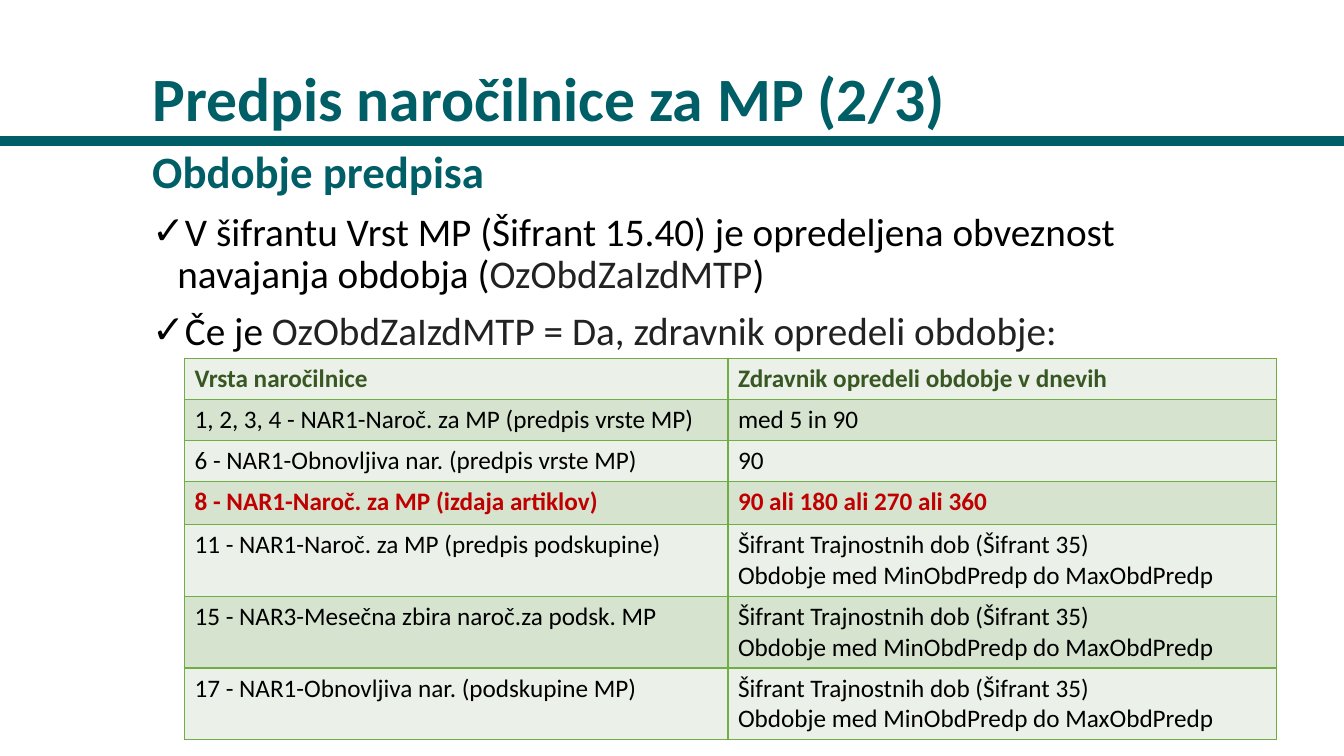
import lxml.etree
import pptx
import pptx.dml.color
import pptx.enum.shapes
import pptx.enum.text
import pptx.oxml.ns
import pptx.util

PX = 9144  # EMU in one px, 100 px to the inch
FONT = "Calibri"
TEAL, GREEN, DARK_GREEN = "005E66", "70AD47", "385723"
BLACK, GREY, RED = "000000", "222222", "C00000"
BANDS = ["EBF1E9", "D5E3CF"]

DURATION = ["Šifrant Trajnostnih dob (Šifrant 35)",
            "Obdobje med MinObdPredp do MaxObdPredp"]
COLUMN_WIDTHS = [539, 544]
# Row height, order form type, lines of the period
ROWS = [
    (40, "Vrsta naročilnice", ["Zdravnik opredeli obdobje v dnevih"]),
    (40, "1, 2, 3, 4 - NAR1-Naroč. za MP (predpis vrste MP)", ["med 5 in 90"]),
    (40, "6 - NAR1-Obnovljiva nar. (predpis vrste MP)", ["90"]),
    (43, "8 - NAR1-Naroč. za MP (izdaja artiklov)", ["90 ali 180 ali 270 ali 360"]),
    (70, "11 - NAR1-Naroč. za MP (predpis podskupine)", DURATION),
    (70, "15 - NAR3-Mesečna zbira naroč.za podsk. MP", DURATION),
    (70, "17 - NAR1-Obnovljiva nar. (podskupine MP)", DURATION),
]
# Emphasised rows; all others are plain black
ROW_COLORS = {0: DARK_GREEN, 3: RED}


def px(value):
    return pptx.util.Emu(value * PX)


def rgb(value):
    return pptx.dml.color.RGBColor.from_string(value)


def add_child(parent, tag, **attributes):
    return lxml.etree.SubElement(parent, pptx.oxml.ns.qn(tag), attributes)


def add_text(paragraph, text, size=18, color=BLACK, bold=False):
    run = paragraph.add_run()
    run.text = text
    run.font.name = FONT
    run.font.size = pptx.util.Pt(size)
    run.font.bold = bold
    run.font.color.rgb = rgb(color)


def format_paragraph(paragraph, before=0, bullet=None):
    properties = paragraph._p.get_or_add_pPr()
    indent = 25 * PX if bullet else 0
    properties.set("marL", str(indent))
    properties.set("indent", str(-indent))
    if bullet:
        add_child(properties, "a:buChar", char=bullet)
    else:
        add_child(properties, "a:buNone")
    paragraph.alignment = pptx.enum.text.PP_ALIGN.LEFT
    paragraph.line_spacing = 0.9
    paragraph.space_before = pptx.util.Pt(before)


def place(shape, left, top, width, height, anchor):
    shape.left, shape.top = px(left), px(top)
    shape.width, shape.height = px(width), px(height)
    frame = shape.text_frame
    frame.word_wrap = True
    frame.auto_size = pptx.enum.text.MSO_AUTO_SIZE.NONE
    frame.vertical_anchor = anchor
    return frame


def add_rule(slide, y, width, color, weight):
    rule = slide.shapes.add_connector(
        pptx.enum.shapes.MSO_CONNECTOR.STRAIGHT, 0, px(y), px(width), px(y))
    rule.line.color.rgb = rgb(color)
    rule.line.width = pptx.util.Pt(weight)
    add_child(rule._element.spPr, "a:effectLst")


def fill_title(slide, text):
    frame = place(slide.shapes.title, 141, 15, 1101, 124,
                  pptx.enum.text.MSO_ANCHOR.BOTTOM)
    format_paragraph(frame.paragraphs[0])
    add_text(frame.paragraphs[0], text, size=44, color=TEAL, bold=True)


def fill_body(slide, heading, items):
    frame = place(slide.placeholders[1], 141, 144, 1104, 589,
                  pptx.enum.text.MSO_ANCHOR.TOP)
    format_paragraph(frame.paragraphs[0])
    add_text(frame.paragraphs[0], heading, size=32, color=TEAL, bold=True)
    for item in items:
        paragraph = frame.add_paragraph()
        format_paragraph(paragraph, before=10, bullet="✓")
        for text, color in item:
            add_text(paragraph, text, size=28, color=color)


def format_cell(cell, lines, fill, color, bold):
    # Borders come before the fill in the cell properties
    properties = cell._tc.get_or_add_tcPr()
    for side in ("a:lnL", "a:lnR", "a:lnT", "a:lnB"):
        border = add_child(properties, side, w=str(pptx.util.Pt(1)))
        add_child(add_child(border, "a:solidFill"), "a:srgbClr", val=GREEN)
    cell.fill.solid()
    cell.fill.fore_color.rgb = rgb(fill)
    frame = cell.text_frame
    for index, line in enumerate(lines):
        paragraph = frame.add_paragraph() if index else frame.paragraphs[0]
        add_text(paragraph, line, color=color, bold=bold)


def add_period_table(slide, left, top):
    height = sum(row[0] for row in ROWS)
    table = slide.shapes.add_table(
        len(ROWS), len(COLUMN_WIDTHS), px(left), px(top),
        px(sum(COLUMN_WIDTHS)), px(height)).table
    for column, width in zip(table.columns, COLUMN_WIDTHS):
        column.width = px(width)
    for index, (row_height, kind, period) in enumerate(ROWS):
        table.rows[index].height = px(row_height)
        color = ROW_COLORS.get(index, BLACK)
        for column, lines in enumerate([[kind], period]):
            format_cell(table.cell(index, column), lines,
                        BANDS[index % 2], color, index in ROW_COLORS)


def main():
    presentation = pptx.Presentation()
    presentation.slide_width, presentation.slide_height = px(1333), px(750)
    slide = presentation.slides.add_slide(presentation.slide_layouts[1])

    # Heading and rule
    add_rule(slide, 140, 1333, TEAL, 7)
    fill_title(slide, "Predpis naročilnice za MP (2/3)")

    # Checklist
    fill_body(slide, "Obdobje predpisa", [
        [("V šifrantu Vrst MP (Šifrant 15.40) je opredeljena obveznost "
          "navajanja obdobja (", BLACK), ("OzObdZaIzdMTP", GREY), (")", BLACK)],
        [("Če je ", BLACK),
         ("OzObdZaIzdMTP = Da, zdravnik opredeli obdobje:", GREY)],
    ])

    # Periods by order form
    add_period_table(slide, 183, 356)
    presentation.save("out.pptx")


if __name__ == "__main__":
    main()
